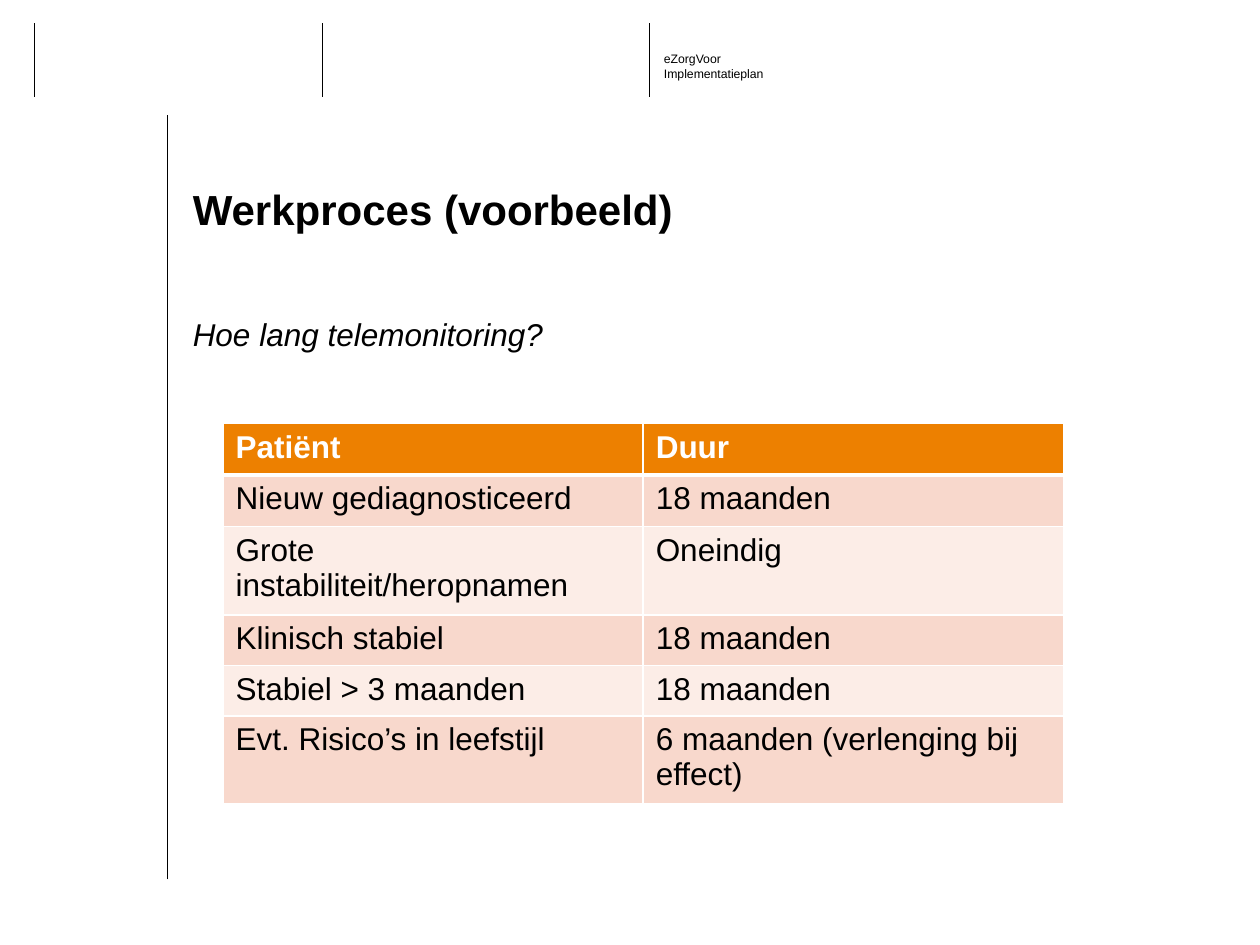
import pptx
import pptx.dml.color
import pptx.enum.shapes
import pptx.enum.text
import pptx.oxml
import pptx.oxml.ns
import pptx.util

FONT = "Arial"
BLACK, WHITE, ORANGE = "000000", "FFFFFF", "ED8000"
BANDS = ["F8D8CC", "FCEDE7"]
CONTENT_LEFT, CONTENT_WIDTH = 1.53, 7.95
HEADER_RULES = [0.27, 2.56, 5.15]
DURATIONS = [
    ("Patiënt", "Duur"),
    ("Nieuw gediagnosticeerd", "18 maanden"),
    ("Grote instabiliteit/heropnamen", "Oneindig"),
    ("Klinisch stabiel", "18 maanden"),
    ("Stabiel > 3 maanden", "18 maanden"),
    ("Evt. Risico’s in leefstijl", "6 maanden (verlenging bij effect)"),
]
ROW_HEIGHTS = [0.41] * 2 + [0.29] * 4


def inches(*lengths):
    return [pptx.util.Inches(length) for length in lengths]


def rgb(hex_color):
    return pptx.dml.color.RGBColor.from_string(hex_color)


def style_runs(paragraph, size, color=BLACK, bold=False, italic=False):
    for run in paragraph.runs:
        run.font.name = FONT
        run.font.size = pptx.util.Pt(size)
        run.font.color.rgb = rgb(color)
        run.font.bold = bold
        run.font.italic = italic


def add_rule(slide, x, top, bottom, width):
    rule = slide.shapes.add_connector(
        pptx.enum.shapes.MSO_CONNECTOR.STRAIGHT, *inches(x, bottom, x, top))
    rule.line.color.rgb = rgb(BLACK)
    rule.line.width = pptx.util.Pt(width)
    properties = rule.line._get_or_add_ln().getparent()
    pptx.oxml.ns.qn("a:effectLst")
    properties.append(pptx.oxml.parse_xml(
        f'<a:effectLst {pptx.oxml.ns.nsdecls("a")}/>'))


def add_text(slide, box, text, size, leading=None, bold=False, italic=False):
    frame = slide.shapes.add_textbox(*inches(*box)).text_frame
    frame.word_wrap = True
    frame.vertical_anchor = pptx.enum.text.MSO_ANCHOR.TOP
    frame.margin_left = frame.margin_right = 0
    frame.margin_top = frame.margin_bottom = 0
    paragraph = frame.paragraphs[0]
    paragraph.text = text
    if leading:
        paragraph.line_spacing = pptx.util.Pt(leading)
    style_runs(paragraph, size, bold=bold, italic=italic)


def set_borders(cell, top, bottom):
    properties = cell._tc.get_or_add_tcPr()
    widths = {"lnL": 1, "lnR": 1, "lnT": top, "lnB": bottom}
    for position, (side, width) in enumerate(widths.items()):
        properties.insert(position, pptx.oxml.parse_xml(
            f'<a:{side} {pptx.oxml.ns.nsdecls("a")} w="{pptx.util.Pt(width)}">'
            f'<a:solidFill><a:srgbClr val="{WHITE}"/></a:solidFill></a:{side}>'))


def add_duration_table(slide, left, top, width):
    columns = len(DURATIONS[0])
    table = slide.shapes.add_table(
        len(DURATIONS), columns,
        *inches(left, top, width, sum(ROW_HEIGHTS))).table
    for row, height in zip(table.rows, ROW_HEIGHTS):
        row.height = pptx.util.Inches(height)
    for row_index, texts in enumerate(DURATIONS):
        is_header = row_index == 0
        for column_index, text in enumerate(texts):
            cell = table.cell(row_index, column_index)
            cell.text_frame.text = text
            style_runs(cell.text_frame.paragraphs[0], 18,
                       WHITE if is_header else BLACK, bold=is_header)
            cell.fill.solid()
            cell.fill.fore_color.rgb = rgb(
                ORANGE if is_header else BANDS[(row_index - 1) % 2])
            set_borders(cell, 3 if row_index == 1 else 1, 3 if is_header else 1)


def main():
    presentation = pptx.Presentation()
    presentation.slide_width, presentation.slide_height = inches(10, 7.5)
    slide = presentation.slides.add_slide(presentation.slide_layouts[6])
    for x in HEADER_RULES:
        add_rule(slide, x, 0.18, 0.77, 0.25)
    add_rule(slide, 1.33, 0.91, 6.98, 0.1)
    add_text(slide, (CONTENT_LEFT, 1.47, CONTENT_WIDTH, 0.79),
             "Werkproces (voorbeeld)", 24, leading=28, bold=True)
    add_text(slide, (CONTENT_LEFT, 2.41, CONTENT_WIDTH, 4.57),
             "Hoe lang telemonitoring?", 18, leading=28.1, italic=True)
    add_text(slide, (5.27, 0.41, 1.97, 0.12),
             "eZorgVoor\vImplementatieplan", 7)
    add_duration_table(slide, 1.77, 3.36, 6.67)
    presentation.save("out.pptx")


if __name__ == "__main__":
    main()
